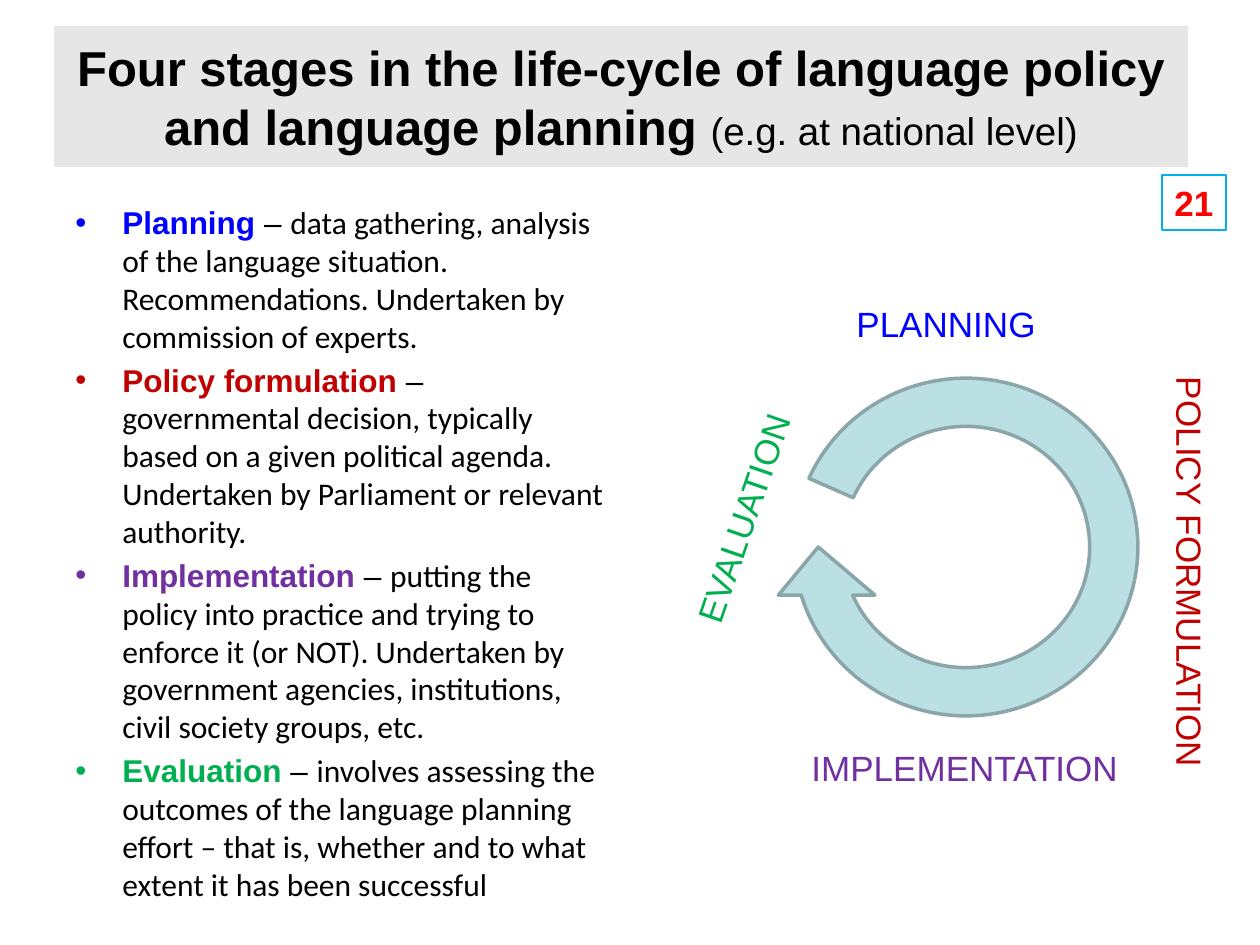
import pptx
import pptx.util
import pptx.dml.color
import pptx.enum.shapes
import pptx.enum.text
from lxml import etree

PX = 914400 / 126  # EMU per px
THEME = {
    "head": "Arial", "body": "Calibri",
    "black": "000000", "grey": "E6E6E6", "white": "FFFFFF",
    "blue": "0000FF", "red": "C00000", "purple": "7030A0", "green": "00B050",
    "arrow": "BBE0E3", "edge": "8AA6A8", "frame": "00B0F0", "page": "FF0000",
    "title": 28, "sub": 22, "text": 18, "label": 20,
}
SIZE = (1260, 945)
TITLE = [("Four stages in the life-cycle of language policy and language planning ",
          "title", True),
         ("(e.g. at national level)", "sub", False)]
TITLE_BOX = (54, 26, 1134, 141)
LIST_BOX = (63, 197, 557, 712)
STAGES = [
    ("Planning ", "blue", "– ",
     "data gathering, analysis of the language situation. "
     "Recommendations. Undertaken by commission of experts."),
    ("Policy formulation ", "red", "–  ",
     "governmental decision, typically based on a given political agenda. "
     "Undertaken by Parliament or relevant authority."),
    ("Implementation ", "purple", "– ",
     "putting the policy into practice and trying to enforce it (or NOT). "
     "Undertaken by government agencies, institutions, civil society groups, etc."),
    ("Evaluation ", "green", "– ",
     "involves assessing the outcomes of the language planning effort – "
     "that is, whether and to what extent it has been successful"),
]
# text, colour, box, turn, wrap
LABELS = [
    ("PLANNING", "blue", (844, 296, 207, 55), 0, True),
    ("POLICY FORMULATION", "red", (980, 547, 420, 55), 90, False),
    ("IMPLEMENTATION", "purple", (799, 740, 334, 55), 0, True),
    ("EVALUATION", "green", (591, 447, 334, 55), 289, True),
]
ARROW_BOX = (770, 354, 392, 386)
ARROW_ADJ = (0.125, 11.42, 204.58, 14.17, 0.125)
PAGE_BOX = (1162, 175, 64, 55)


def emu(n):
    return pptx.util.Emu(round(n * PX))


def tint(name):
    return pptx.dml.color.RGBColor.from_string(THEME[name])


def fill(shape, name):
    shape.fill.solid()
    shape.fill.fore_color.rgb = tint(name)


def edge(shape, name, width):
    shape.line.color.rgb = tint(name)
    shape.line.width = pptx.util.Pt(width)


def write(para, text, size, color, bold=False, face="head"):
    run = para.add_run()
    run.text = text
    font = run.font
    font.name, font.bold = THEME[face], bold
    font.size = pptx.util.Pt(THEME[size])
    font.color.rgb = tint(color)


def box(slide, place, wrap=True):
    shape = slide.shapes.add_textbox(*map(emu, place))
    shape.text_frame.word_wrap = wrap
    return shape


def bullet(para, color):
    """Hang the paragraph behind a coloured bullet."""
    props = para._p.get_or_add_pPr()
    props.set("marL", str(emu(47)))
    props.set("indent", str(-emu(47)))
    para.space_before = pptx.util.Pt(3.6)
    space = "{http://schemas.openxmlformats.org/drawingml/2006/main}"
    paint = etree.SubElement(props, space + "buClr")
    etree.SubElement(paint, space + "srgbClr", val=THEME[color])
    etree.SubElement(props, space + "buFont", typeface=THEME["head"])
    etree.SubElement(props, space + "buChar", char="•")


def head(slide):
    title = slide.shapes.title
    title.left, title.top, title.width, title.height = map(emu, TITLE_BOX)
    fill(title, "grey")
    frame = title.text_frame
    frame.word_wrap = True
    frame.auto_size = pptx.enum.text.MSO_AUTO_SIZE.NONE
    frame.vertical_anchor = pptx.enum.text.MSO_ANCHOR.MIDDLE
    para = frame.paragraphs[0]
    para.alignment = pptx.enum.text.PP_ALIGN.CENTER
    for text, size, bold in TITLE:
        write(para, text, size, "black", bold)


def stages(slide):
    frame = box(slide, LIST_BOX).text_frame
    for i, (name, color, dash, text) in enumerate(STAGES):
        para = frame.add_paragraph() if i else frame.paragraphs[0]
        bullet(para, color)
        write(para, name, "text", color, True)
        write(para, dash, "text", "black")
        write(para, text, "text", "black", face="body")


def cycle(slide):
    kind = pptx.enum.shapes.MSO_SHAPE.CIRCULAR_ARROW
    arrow = slide.shapes.add_shape(kind, *map(emu, ARROW_BOX))
    arrow.shadow.inherit = False
    arrow.rotation = 180
    for i, value in enumerate(ARROW_ADJ):
        arrow.adjustments[i] = value
    fill(arrow, "arrow")
    edge(arrow, "edge", 2)
    for text, color, place, turn, wrap in LABELS:
        label = box(slide, place, wrap)
        label.rotation = turn
        write(label.text_frame.paragraphs[0], text, "label", color)


def number(slide):
    page = box(slide, PAGE_BOX, False)
    edge(page, "frame", 0.75)
    write(page.text_frame.paragraphs[0], "21", "label", "page", True)


def main():
    deck = pptx.Presentation()
    deck.slide_width, deck.slide_height = map(emu, SIZE)
    slide = deck.slides.add_slide(deck.slide_layouts[5])
    fill(slide.background, "white")
    for part in (head, stages, cycle, number):
        part(slide)
    deck.save("out.pptx")


if __name__ == "__main__":
    main()
